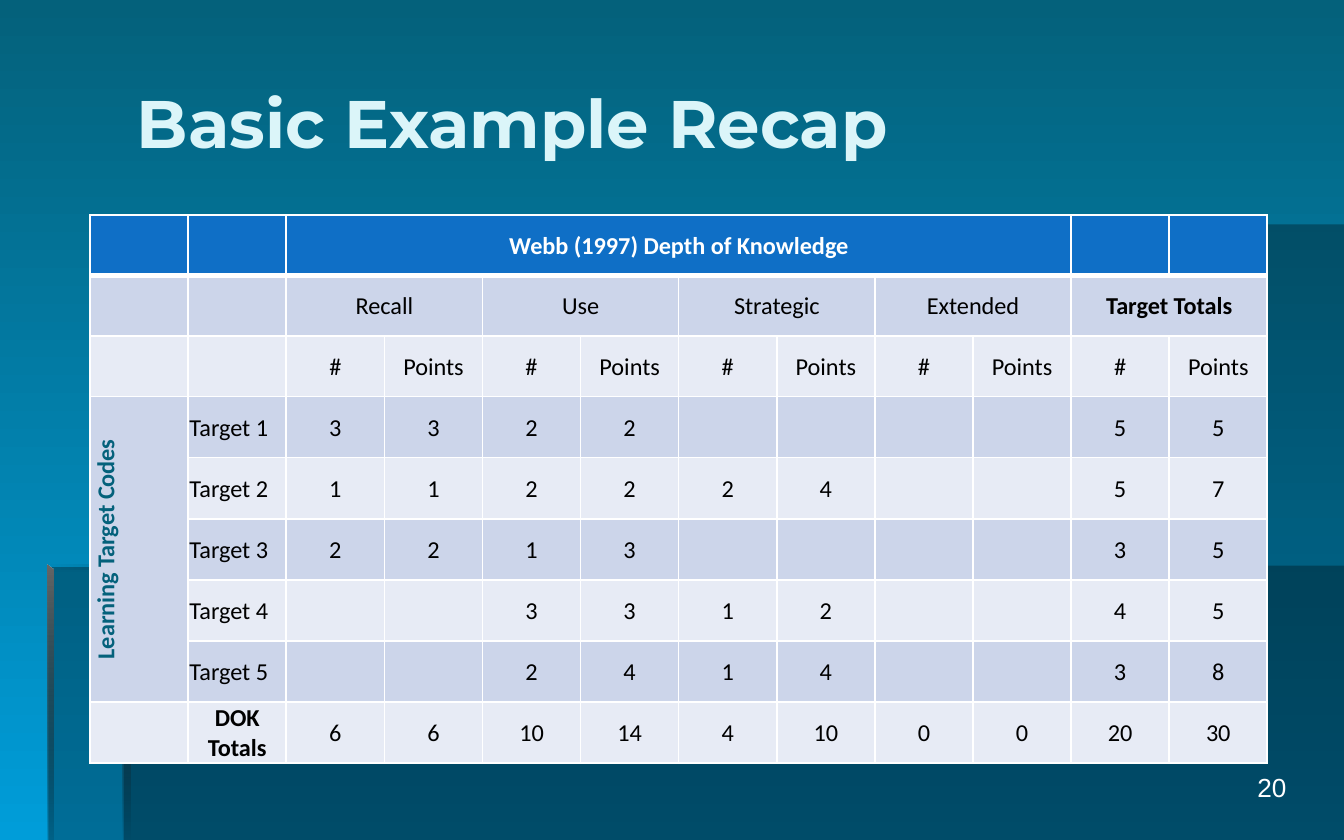
from copy import deepcopy

from lxml import etree
from pptx import Presentation
from pptx.dml.color import RGBColor
from pptx.enum import text
from pptx.oxml.ns import qn
from pptx.util import Inches, Pt

WHITE = RGBColor(0xFF, 0xFF, 0xFF)
BLACK = RGBColor(0, 0, 0)
GREY = RGBColor(0x66, 0x66, 0x66)
TEAL = RGBColor(0x04, 0x61, 0x7B)
SKY = RGBColor(0x00, 0x9D, 0xD9)
PALE = RGBColor(0xDB, 0xF5, 0xF9)
BLUE = RGBColor(0x0F, 0x6F, 0xC6)
BANDS = [RGBColor(0xCC, 0xD5, 0xEA), RGBColor(0xE7, 0xEB, 0xF5)]

# Content
TITLE = "Basic Example Recap"
PAGE = "20"
HEADING = "Webb (1997) Depth of Knowledge"
LEVELS = ["Recall", "Use", "Strategic", "Extended", "Target Totals"]
SIDE = "Learning Target Codes"
TARGETS = [  # count and points for each level, then the totals
    ("Target 1", [3, 3, 2, 2, "", "", "", "", 5, 5]),
    ("Target 2", [1, 1, 2, 2, 2, 4, "", "", 5, 7]),
    ("Target 3", [2, 2, 1, 3, "", "", "", "", 3, 5]),
    ("Target 4", ["", "", 3, 3, 1, 2, "", "", 4, 5]),
    ("Target 5", ["", "", 2, 4, 1, 4, "", "", 3, 8]),
    ("DOK\nTotals", [6, 6, 10, 14, 4, 10, 0, 0, 20, 30]),
]
ROWS = [
    ["", "", HEADING] + [""] * 9,
    ["", ""] + [t for level in LEVELS for t in (level, "")],
    ["", ""] + ["#", "Points"] * len(LEVELS),
] + [["", name] + values for name, values in TARGETS]
ROWS[3][0] = SIDE
BOLD = {HEADING, "Target Totals", SIDE, "DOK\nTotals"}
MERGES = [(0, 2, 0, 9), (3, 0, 7, 0)] + [(1, c, 1, c + 1) for c in range(2, 12, 2)]

# Backdrop: outline points, gradient stops (colour, opacity %), angle
PANELS = [
    [(0.92, 4.21), (0.92, 6.25), (10, 6.25), (10, 4.21)],
    [(0.94, 4.22), (0.36, 4.22), (0.36, 6.25), (10, 6.25), (10, 1.67), (0.94, 1.67)],
]
EDGES = [
    ([(0.92, 1.67), (0.92, 1.71), (8.91, 1.71), (8.91, 1.67)],
     [(BLACK, 0), (BLACK, 100)], 0),
    ([(0.92, 1.67), (0.92, 4.25), (0.97, 4.25), (0.96, 1.7)],
     [(GREY, 100), (BLACK, 100)], 270),
    ([(0.91, 6.25), (0.97, 6.25), (0.96, 4.24), (0.91, 4.2)],
     [(GREY, 100), (BLACK, 0)], 270),
    ([(0.35, 4.2), (0.35, 4.24), (5.35, 4.24), (5.35, 4.2)],
     [(BLACK, 0), (BLACK, 100)], 0),
    ([(0.35, 4.2), (0.35, 6.25), (0.4, 6.25), (0.4, 4.24)],
     [(GREY, 100), (BLACK, 10)], 270),
]


def set_alpha(clr, percent):
    if percent < 100:
        etree.SubElement(clr, qn("a:alpha"), val=str(percent * 1000))


def set_gradient(fill, stops, angle):
    fill.gradient()
    fill.gradient_angle = angle
    for stop, (color, _) in zip(fill.gradient_stops, stops):
        stop.color.rgb = color


def add_outline(shapes, points):
    points = [(Inches(x), Inches(y)) for x, y in points]
    builder = shapes.build_freeform(*points[0])
    builder.add_line_segments(points[1:], close=True)
    sp = builder.convert_to_shape()
    sp.shadow.inherit = False
    sp.line.fill.background()
    return sp


def set_text(tf, words, align, color, **font):
    p = tf.paragraphs[0]
    p.text = words
    p.alignment = align
    for r in p.runs:
        r.font.color.rgb = color
        for key, value in font.items():
            setattr(r.font, key, value)
    for br in p._p.findall(qn("a:br")):
        br.insert(0, deepcopy(p.runs[0]._r.rPr))


def add_label(shapes, box, words, align, anchor, color, **font):
    tf = shapes.add_textbox(*map(Inches, box)).text_frame
    tf.word_wrap = True
    tf.vertical_anchor = anchor
    set_text(tf, words, align, color, **font)


def set_borders(cell, row):
    tcPr = cell._tc.get_or_add_tcPr()
    thick = {0: "lnB", 1: "lnT"}.get(row)  # rule under the heading
    for i, side in enumerate(("lnL", "lnR", "lnT", "lnB")):
        ln = etree.Element(qn("a:" + side), w=str(Pt(3 if side == thick else 1)))
        solid = etree.SubElement(ln, qn("a:solidFill"))
        etree.SubElement(solid, qn("a:srgbClr"), val=str(WHITE))
        tcPr.insert(i, ln)


prs = Presentation()
prs.slide_width, prs.slide_height = Inches(10), Inches(6.25)
s = prs.slides.add_slide(prs.slide_layouts[6])
set_gradient(s.background.fill, [(TEAL, 100), (SKY, 100)], 270)

# Backdrop
for points in PANELS:
    sp = add_outline(s.shapes, points)
    sp.fill.solid()
    sp.fill.fore_color.rgb = BLACK
    set_alpha(sp._element.spPr.find(".//" + qn("a:srgbClr")), 30)
for points, stops, angle in EDGES:
    sp = add_outline(s.shapes, points)
    set_gradient(sp.fill, stops, angle)
    for clr, (_, percent) in zip(sp._element.spPr.iter(qn("a:srgbClr")), stops):
        set_alpha(clr, percent)

# Title
add_label(s.shapes, (0.92, 0.28, 8.17, 1.25), TITLE, text.PP_ALIGN.LEFT,
          text.MSO_ANCHOR.MIDDLE, PALE, name="Montserrat", size=Pt(36), bold=True)

# Table
WIDTH, HEIGHT, HEAD_ROW = 8.76, 4.08, 0.45
table = s.shapes.add_table(len(ROWS), len(ROWS[0]), Inches(0.67), Inches(1.6),
                           Inches(WIDTH), Inches(HEIGHT)).table
for column in table.columns:
    column.width = Inches(WIDTH / len(ROWS[0]))
for i, row in enumerate(table.rows):
    row.height = Inches(HEAD_ROW if i < 3 else (HEIGHT - 3 * HEAD_ROW) / len(TARGETS))

MARGINS = {"margin_left": 0.01, "margin_top": 0.01, "margin_right": 0.01, "margin_bottom": 0}
for i, values in enumerate(ROWS):
    for j, value in enumerate(values):
        cell = table.cell(i, j)
        cell.vertical_anchor = text.MSO_ANCHOR.MIDDLE
        for key, margin in MARGINS.items():
            setattr(cell, key, Inches(margin))
        cell.fill.solid()
        cell.fill.fore_color.rgb = BANDS[(i - 1) % 2] if i else BLUE
        set_borders(cell, i)
        if value != "":
            words = str(value)
            left = words.startswith("Target ") and j == 1
            set_text(cell.text_frame, words,
                     text.PP_ALIGN.LEFT if left else text.PP_ALIGN.CENTER,
                     {HEADING: WHITE, SIDE: TEAL}.get(words, BLACK),
                     name="Calibri", size=Pt(13), bold=words in BOLD)
for top, first, bottom, last in MERGES:
    table.cell(top, first).merge(table.cell(bottom, last))
table.cell(3, 0)._tc.get_or_add_tcPr().set("vert", "vert270")

# Page number
add_label(s.shapes, (7.59, 5.69, 2.08, 0.43), PAGE, text.PP_ALIGN.RIGHT,
          text.MSO_ANCHOR.TOP, WHITE, name="Arial", size=Pt(14))

prs.save("out.pptx")
